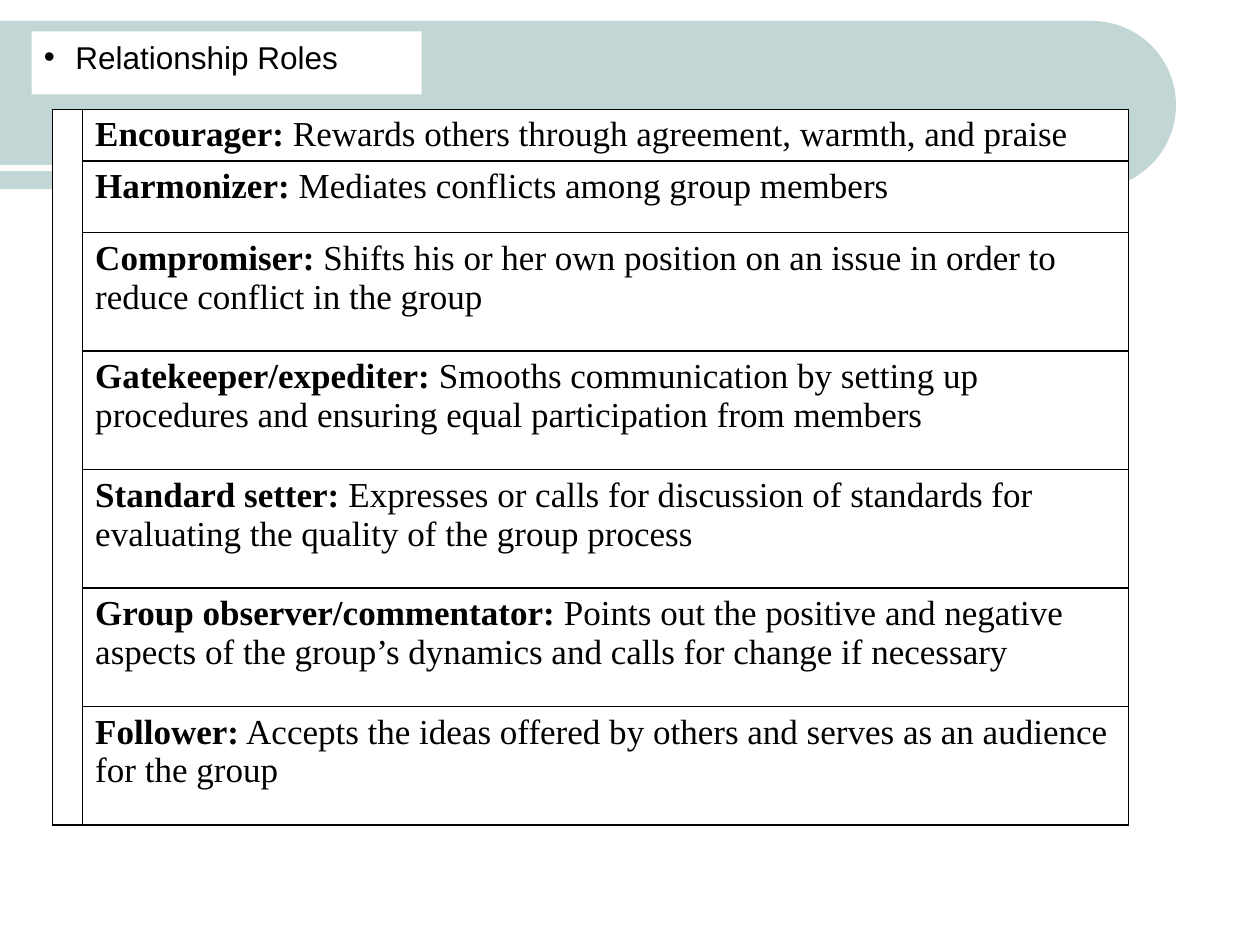
import math
from lxml import etree
from pptx import Presentation
from pptx.dml.color import RGBColor
from pptx.enum.shapes import MSO_CONNECTOR, MSO_SHAPE
from pptx.enum.text import MSO_ANCHOR, PP_ALIGN
from pptx.oxml.ns import qn
from pptx.util import Pt

STRAIGHT = MSO_CONNECTOR.STRAIGHT
RECT = MSO_SHAPE.RECTANGLE
TOP = MSO_ANCHOR.TOP
LEFT = PP_ALIGN.LEFT

COLORS = {"band": "C2D6D6", "white": "FFFFFF", "black": "000000"}
RGB = {name: RGBColor.from_string(value) for name, value in COLORS.items()}

ROLES = [
    ("Encourager:", "Rewards others through agreement, warmth, and praise"),
    ("Harmonizer:", "Mediates conflicts among group members"),
    ("Compromiser:", "Shifts his or her own position on an issue in order to "
                     "reduce conflict in the group"),
    ("Gatekeeper/expediter:", "Smooths communication by setting up procedures "
                              "and ensuring equal participation from members"),
    ("Standard setter:", "Expresses or calls for discussion of standards for "
                         "evaluating the quality of the group process"),
    ("Group observer/commentator:", "Points out the positive and negative aspects of the "
                                    "group’s dynamics and calls for change if necessary"),
    ("Follower:", "Accepts the ideas offered by others and serves as an audience "
                  "for the group"),
]


def add_text(p, text, size=20, font="Times New Roman", bold=False):
    r = p.add_run()
    r.text = text
    r.font.size = Pt(size)
    r.font.name = font
    r.font.bold = bold
    r.font.color.rgb = RGB["black"]


def style_cell(cell):
    """Fill the cell white and give it thin black borders."""
    cell.fill.solid()
    cell.fill.fore_color.rgb = RGB["white"]
    tcPr = cell._tc.get_or_add_tcPr()
    for i, side in enumerate(("a:lnL", "a:lnR", "a:lnT", "a:lnB")):
        ln = etree.Element(qn(side), w=str(Pt(1)))
        fill = etree.SubElement(ln, qn("a:solidFill"))
        etree.SubElement(fill, qn("a:srgbClr"), val=COLORS["black"])
        tcPr.insert(i, ln)


prs = Presentation()
prs.slide_width, prs.slide_height = Pt(720), Pt(540)
s = prs.slides.add_slide(prs.slide_layouts[6])

# Band with a semicircular right end
radius, cx, cy = 48, 624, 60
arc = [(cx + radius * math.cos(math.radians(a)), cy + radius * math.sin(math.radians(a)))
       for a in range(-90, 91, 3)]
builder = s.shapes.build_freeform(0, Pt(cy - radius))
builder.add_line_segments([(Pt(x), Pt(y)) for x, y in arc + [(0, cy + radius)]], close=True)
band = builder.convert_to_shape()
band.shadow.inherit = False
band.fill.solid()
band.fill.fore_color.rgb = RGB["band"]
band.line.fill.background()

stripe = s.shapes.add_connector(STRAIGHT, 0, Pt(96), Pt(636), Pt(96))
stripe.line.color.rgb = RGB["white"]
stripe.line.width = Pt(3)
etree.SubElement(stripe._element.spPr, qn("a:effectLst"))

# Table of roles, with one tall empty cell on the left
col_widths = [17, 597.5]
row_heights = [29.5, 41] + [67.7] * 5
frame = s.shapes.add_table(len(ROLES), 2, Pt(30), Pt(62.5),
                           Pt(sum(col_widths)), Pt(sum(row_heights)))
table = frame.table
table.first_row = table.horz_banding = False
for column, width in zip(table.columns, col_widths):
    column.width = Pt(width)
for row, height, (role, meaning) in zip(table.rows, row_heights, ROLES):
    row.height = Pt(height)
    for cell in row.cells:
        style_cell(cell)
    p = row.cells[1].text_frame.paragraphs[0]
    add_text(p, role, bold=True)
    add_text(p, " " + meaning)
table.cell(0, 0).merge(table.cell(len(ROLES) - 1, 0))

# Heading
heading = s.shapes.add_shape(RECT, Pt(18), Pt(18), Pt(223), Pt(36))
heading.shadow.inherit = False
heading.fill.solid()
heading.fill.fore_color.rgb = RGB["white"]
heading.line.fill.background()
tf = heading.text_frame
tf.word_wrap = True
tf.vertical_anchor = TOP
p = tf.paragraphs[0]
p.alignment = LEFT
pPr = p._p.get_or_add_pPr()
pPr.set("marL", str(Pt(18)))
pPr.set("indent", str(Pt(-18)))
etree.SubElement(pPr, qn("a:buFont"), typeface="Arial")
etree.SubElement(pPr, qn("a:buChar"), char="•")
add_text(p, "Relationship Roles", size=18, font="Arial")

prs.save("out.pptx")
